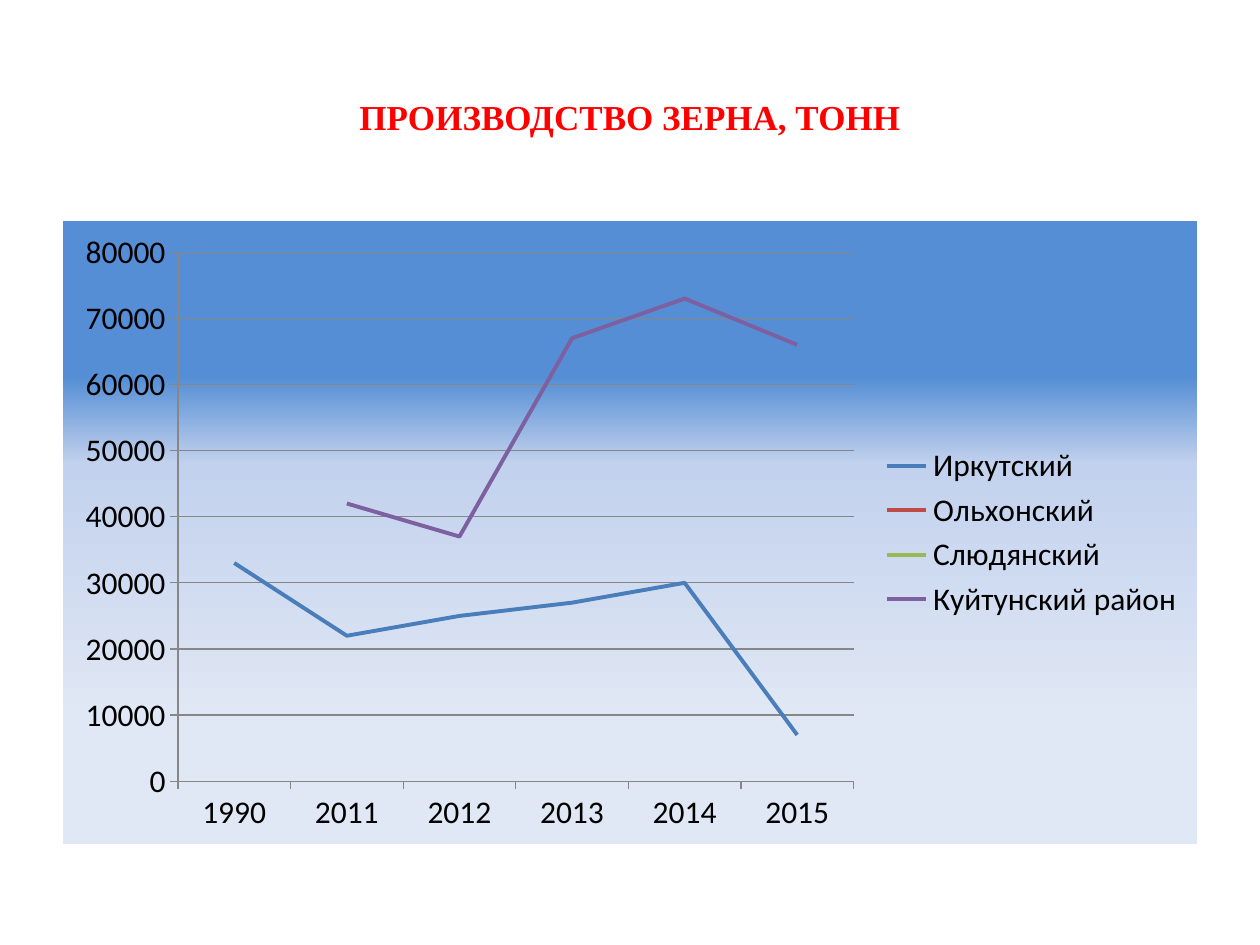
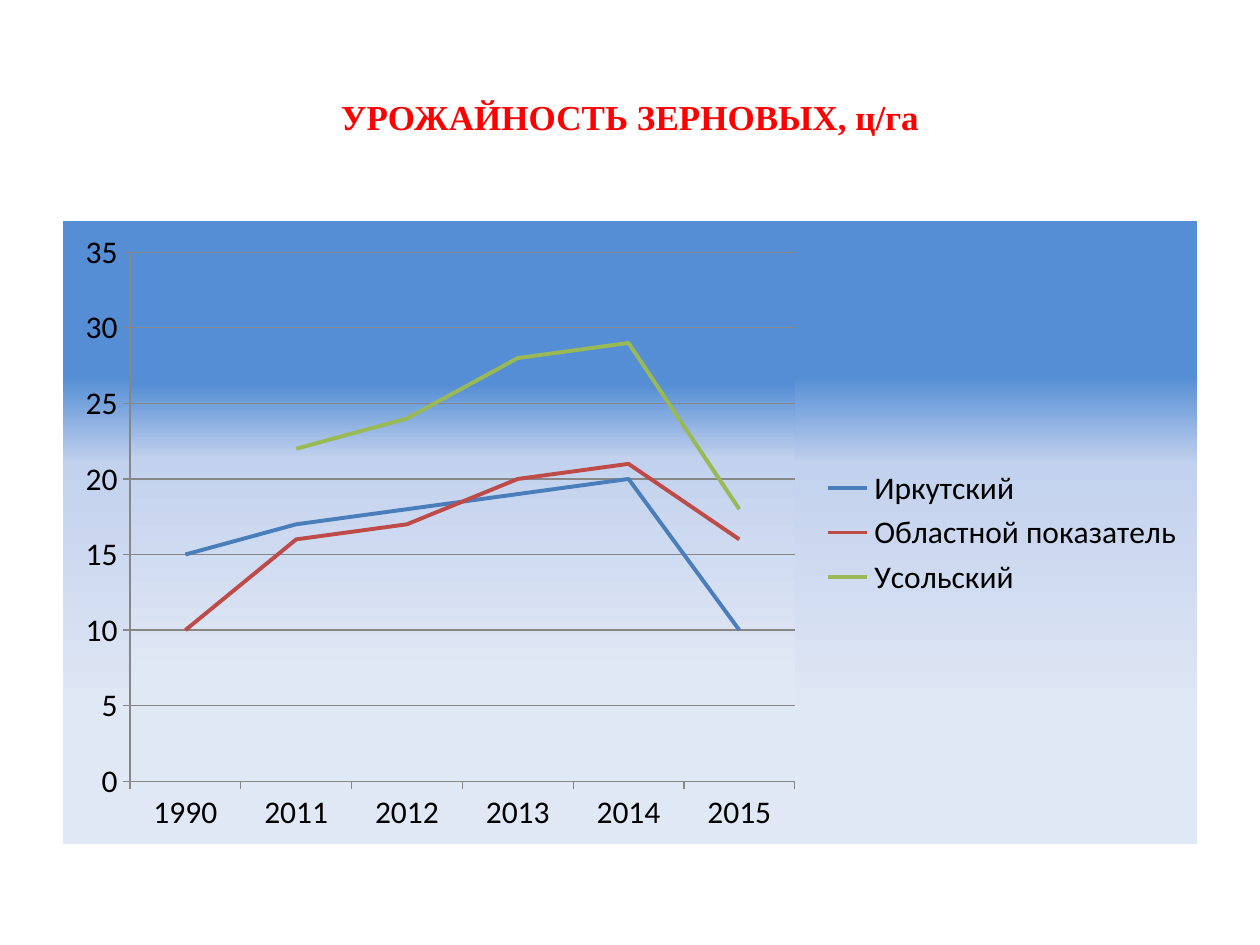
from dataclasses import dataclass

from lxml import etree
from pptx import Presentation
from pptx.chart.data import CategoryChartData
from pptx.dml.color import RGBColor
from pptx.enum.chart import XL_CHART_TYPE, XL_LEGEND_POSITION, XL_TICK_MARK
from pptx.enum.text import MSO_ANCHOR, PP_ALIGN
from pptx.oxml import parse_xml
from pptx.oxml.ns import nsdecls, qn
from pptx.util import Cm, Pt


@dataclass(frozen=True)
class Theme:
    title_font: str = "Times New Roman"
    chart_font: str = "Calibri"
    title_size: int = 20
    chart_size: int = 18
    title_color: str = "FF0000"
    text_color: str = "000000"
    grid_color: str = "878787"
    blue: str = "4A7EBB"
    red: str = "BE4B48"
    green: str = "98B954"
    purple: str = "7D60A0"
    gradient: tuple = ((25, "558ED5"), (39, "C2D1ED"), (80, "E1E8F5"))
    series_width: float = 2.25
    grid_width: float = 0.75


THEME = Theme()
SLIDE_SIZE = (Cm(25.4), Cm(19.05))
TITLE_BOX = (Cm(1.27), Cm(0.76), Cm(22.86), Cm(3.18))
CHART_BOX = (Cm(1.27), Cm(4.45), Cm(22.86), Cm(12.57))
YEARS = ("1990", "2011", "2012", "2013", "2014", "2015")
NO_DATA = (None,) * len(YEARS)

SLIDES = (
    {
        "title": "ПРОИЗВОДСТВО ЗЕРНА, ТОНН",
        "maximum": 80000,
        "step": 10000,
        "plot_gradient": False,
        "series": (
            ("Иркутский", THEME.blue, (33000, 22000, 25000, 27000, 30000, 7000)),
            ("Ольхонский", THEME.red, NO_DATA),
            ("Слюдянский", THEME.green, NO_DATA),
            ("Куйтунский район", THEME.purple,
             (None, 42000, 37000, 67000, 73000, 66000)),
        ),
    },
    {
        "title": "УРОЖАЙНОСТЬ ЗЕРНОВЫХ, ц/га",
        "maximum": 35,
        "step": 5,
        "plot_gradient": True,
        "series": (
            ("Иркутский", THEME.blue, (15, 17, 18, 19, 20, 10)),
            ("Областной показатель", THEME.red, (10, 16, 17, 20, 21, 16)),
            ("Усольский ", THEME.green, (None, 22, 24, 28, 29, 18)),
        ),
    },
)


def set_attributes(target, values):
    for name, value in values.items():
        setattr(target, name, value)


def format_font(font, name, size, color, bold):
    set_attributes(font, {"name": name, "size": Pt(size), "bold": bold})
    font.color.rgb = RGBColor.from_string(color)


def format_line(line, color, width):
    line.color.rgb = RGBColor.from_string(color)
    line.width = Pt(width)


def gradient_properties():
    properties = parse_xml(f'<c:spPr {nsdecls("c", "a")}/>')
    fill = etree.SubElement(properties, qn("a:gradFill"), rotWithShape="1")
    stops = etree.SubElement(fill, qn("a:gsLst"))
    for percent, color in THEME.gradient:
        stop = etree.SubElement(stops, qn("a:gs"), pos=str(percent * 1000))
        etree.SubElement(stop, qn("a:srgbClr"), val=color)
    etree.SubElement(fill, qn("a:lin"), ang="5400000", scaled="0")
    outline = etree.SubElement(properties, qn("a:ln"))
    etree.SubElement(outline, qn("a:noFill"))
    return properties


def place_title(slide, box, text):
    title = slide.shapes.title
    set_attributes(title, dict(zip(("left", "top", "width", "height"), box)))
    frame = title.text_frame
    set_attributes(frame, {"text": text, "word_wrap": True,
                           "vertical_anchor": MSO_ANCHOR.MIDDLE})
    paragraph = frame.paragraphs[0]
    paragraph.alignment = PP_ALIGN.CENTER
    format_font(paragraph.runs[0].font, THEME.title_font, THEME.title_size,
                THEME.title_color, True)


def format_axes(chart, maximum, step):
    set_attributes(chart.value_axis, {
        "minimum_scale": 0, "maximum_scale": maximum, "major_unit": step,
        "has_major_gridlines": True,
    })
    for axis in (chart.category_axis, chart.value_axis):
        set_attributes(axis, {"major_tick_mark": XL_TICK_MARK.OUTSIDE,
                              "minor_tick_mark": XL_TICK_MARK.NONE})
        format_line(axis.format.line, THEME.grid_color, THEME.grid_width)
    format_line(chart.value_axis.major_gridlines.format.line,
                THEME.grid_color, THEME.grid_width)


def place_line_chart(slide, box, content):
    data = CategoryChartData()
    data.categories = YEARS
    for name, _, values in content["series"]:
        data.add_series(name, values)
    chart = slide.shapes.add_chart(XL_CHART_TYPE.LINE, *box, data).chart
    set_attributes(chart, {"has_title": False, "has_legend": True})
    set_attributes(chart.legend, {"position": XL_LEGEND_POSITION.RIGHT,
                                  "include_in_layout": False})
    format_font(chart.font, THEME.chart_font, THEME.chart_size,
                THEME.text_color, False)
    format_axes(chart, content["maximum"], content["step"])

    plot = chart.plots[0]
    plot.vary_by_categories = False
    for series, (_, color, _) in zip(plot.series, content["series"]):
        series.smooth = False
        format_line(series.format.line, color, THEME.series_width)

    chart_element = chart.element.find(qn("c:chart"))
    chart_element.addnext(gradient_properties())
    if content["plot_gradient"]:
        chart_element.find(qn("c:plotArea")).append(gradient_properties())


def add_chart_slide(presentation, content):
    title_only = presentation.slide_layouts.get_by_name("Title Only")
    slide = presentation.slides.add_slide(title_only)
    place_title(slide, TITLE_BOX, content["title"])
    place_line_chart(slide, CHART_BOX, content)


def main():
    presentation = Presentation()
    presentation.slide_width, presentation.slide_height = SLIDE_SIZE
    for content in SLIDES:
        add_chart_slide(presentation, content)
    presentation.save("out.pptx")


if __name__ == "__main__":
    main()
